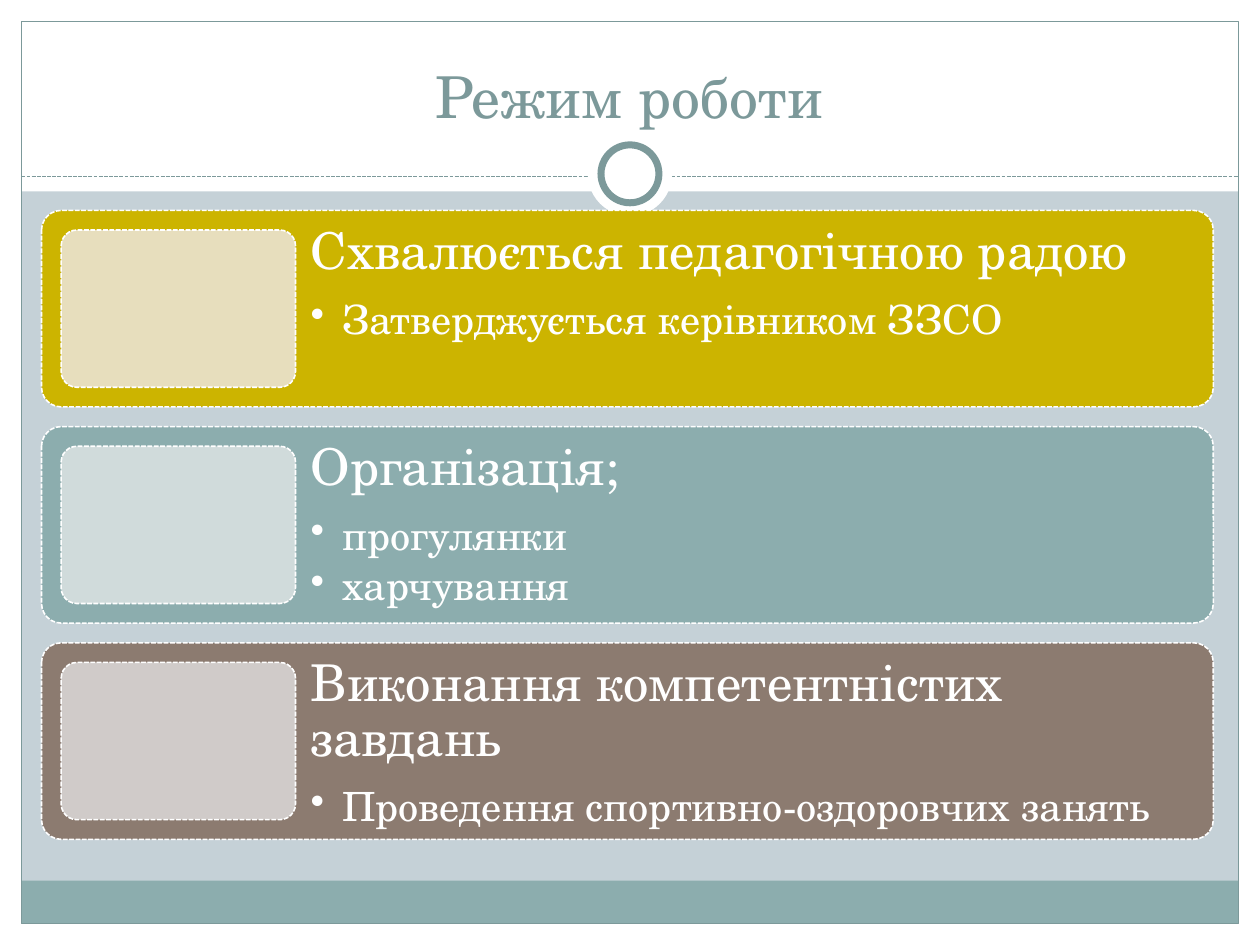
"""Build the slide on the school working regime."""
from lxml import etree
from pptx import Presentation
from pptx.dml.color import RGBColor
from pptx.enum.dml import MSO_LINE
from pptx.enum.shapes import MSO_CONNECTOR, MSO_SHAPE
from pptx.enum.text import MSO_ANCHOR, MSO_AUTO_SIZE, PP_ALIGN
from pptx.oxml.ns import qn
from pptx.util import Inches, Pt

RECT, OVAL, ROUND = MSO_SHAPE.RECTANGLE, MSO_SHAPE.OVAL, MSO_SHAPE.ROUNDED_RECTANGLE
DASH = MSO_LINE.SQUARE_DOT
TOP, BOTTOM = MSO_ANCHOR.TOP, MSO_ANCHOR.BOTTOM
CENTER, LEFT = PP_ALIGN.CENTER, PP_ALIGN.LEFT
FONT = "TeX Gyre Schola"
COLORS = {
    "back": "C5D1D7", "white": "FFFFFF", "teal": "8CADAE", "frame": "7C999A",
    "gold": "CCB400", "pale gold": "E7DEBD", "pale teal": "D0DBDB",
    "brown": "8C7B70", "pale brown": "D0CBC9",
}

TITLE = "Режим роботи"
CARDS = [
    ("gold", "pale gold", "Схвалюється педагогічною радою", ["Затверджується керівником ЗЗСО"]),
    ("teal", "pale teal", "Організація;", ["прогулянки", "харчування"]),
    ("brown", "pale brown", "Виконання компетентністих завдань",
     ["Проведення спортивно-оздоровчих занять"]),
]

WIDTH, HEIGHT, MARGIN = 10, 7.5, 0.17
INNER_WIDTH, INNER_HEIGHT = WIDTH - 2 * MARGIN, HEIGHT - 2 * MARGIN
HEADER, RULE, FOOTER = 1.52, 1.4, 0.34
RING_CENTER, HALO, RING = 1.38, 0.67, 0.46
CARD_LEFT, CARD_TOP, CARD_WIDTH, CARD_HEIGHT = 0.33, 1.67, 9.3, 1.56
PITCH = CARD_HEIGHT * 1.1
PAD = CARD_HEIGHT / 10
PANEL_WIDTH = CARD_WIDTH / 5
TEXT_LEFT = CARD_LEFT + PAD + PANEL_WIDTH
BULLET_INDENT = 0.25
HEADING = {"size": 29, "space_after": 11}
BULLET = {"size": 23, "space_after": 4}


def color(name):
    return RGBColor.from_string(COLORS[name])


def apply(target, values):
    for name, value in values.items():
        setattr(target, name, value)


def style_line(line, name, width, dash=None):
    line.color.rgb = color(name)
    line.width = Pt(width)
    if dash is not None:
        line.dash_style = dash


def add_shape(page, kind, place, fill=None, line=None):
    shape = page.shapes.add_shape(kind, *map(Inches, place))
    shape.shadow.inherit = False
    if fill:
        shape.fill.solid()
        shape.fill.fore_color.rgb = color(fill)
    else:
        shape.fill.background()
    if line:
        style_line(shape.line, *line)
    else:
        shape.line.fill.background()
    if kind == ROUND:
        shape.adjustments[0] = 0.1
    return shape


def write(para, text, size, name):
    span = para.add_run()
    span.text = text
    apply(span.font, {"name": FONT, "size": Pt(size), "bold": False})
    span.font.color.rgb = color(name)


def add_bullet(para):
    properties = para._p.get_or_add_pPr()
    properties.set("marL", str(Inches(BULLET_INDENT)))
    properties.set("indent", str(-Inches(BULLET_INDENT)))
    etree.SubElement(properties, qn("a:buChar")).set("char", "•")


def add_frame(page):
    bands = [
        (0, HEIGHT - MARGIN, WIDTH, MARGIN), (0, 0, WIDTH, HEADER),
        (0, 0, MARGIN, HEIGHT), (WIDTH - MARGIN, 0, MARGIN, HEIGHT),
    ]
    for place in bands:
        add_shape(page, RECT, place, "white")
    add_shape(page, RECT, (MARGIN, HEIGHT - MARGIN - FOOTER, INNER_WIDTH, FOOTER), "teal")
    add_shape(page, RECT, (MARGIN, MARGIN, INNER_WIDTH, INNER_HEIGHT), line=("frame", 0.75))
    ends = (MARGIN, RULE, WIDTH - MARGIN, RULE)
    rule = page.shapes.add_connector(MSO_CONNECTOR.STRAIGHT, *map(Inches, ends))
    style_line(rule.line, "frame", 0.75, DASH)
    etree.SubElement(rule.element.spPr, qn("a:effectLst"))
    for size, line in ((HALO, None), (RING, ("frame", 4))):
        place = ((WIDTH - size) / 2, RING_CENTER - size / 2, size, size)
        add_shape(page, OVAL, place, "white", line)


def add_title(page):
    title = page.shapes.title
    title.element.getparent().append(title.element)
    place = zip(("left", "top", "width", "height"), map(Inches, (0.33, 0.25, 9.33, 0.83)))
    apply(title, dict(place))
    apply(title.text_frame, {"auto_size": MSO_AUTO_SIZE.NONE, "vertical_anchor": BOTTOM})
    para = title.text_frame.paragraphs[0]
    para.alignment = CENTER
    write(para, TITLE, 33, "frame")


def add_card(page, top, fill, panel_fill, heading, bullets):
    outline = ("white", 0.9, DASH)
    add_shape(page, ROUND, (CARD_LEFT, top, CARD_WIDTH, CARD_HEIGHT), fill, outline)
    place = (TEXT_LEFT, top, CARD_LEFT + CARD_WIDTH - TEXT_LEFT, CARD_HEIGHT)
    box = page.shapes.add_textbox(*map(Inches, place))
    frame = box.text_frame
    apply(frame, {"word_wrap": True, "vertical_anchor": TOP})
    apply(frame, {f"margin_{side}": Inches(0.12) for side in ("left", "top", "right", "bottom")})
    for index, text in enumerate([heading, *bullets]):
        para = frame.add_paragraph() if index else frame.paragraphs[0]
        form = BULLET if index else HEADING
        apply(para, {"alignment": LEFT, "line_spacing": 0.9, "level": min(index, 1),
                     "space_before": Pt(0), "space_after": Pt(form["space_after"])})
        if index:
            add_bullet(para)
        write(para, text, form["size"], "white")
    panel = (CARD_LEFT + PAD, top + PAD, PANEL_WIDTH, CARD_HEIGHT - 2 * PAD)
    add_shape(page, ROUND, panel, panel_fill, outline)


def main():
    deck = Presentation()
    apply(deck, {"slide_width": Inches(WIDTH), "slide_height": Inches(HEIGHT)})
    page = deck.slides.add_slide(deck.slide_layouts[5])
    page.background.fill.solid()
    page.background.fill.fore_color.rgb = color("back")
    add_frame(page)
    add_title(page)
    for row, card in enumerate(CARDS):
        add_card(page, CARD_TOP + row * PITCH, *card)
    deck.save("out.pptx")


if __name__ == "__main__":
    main()
